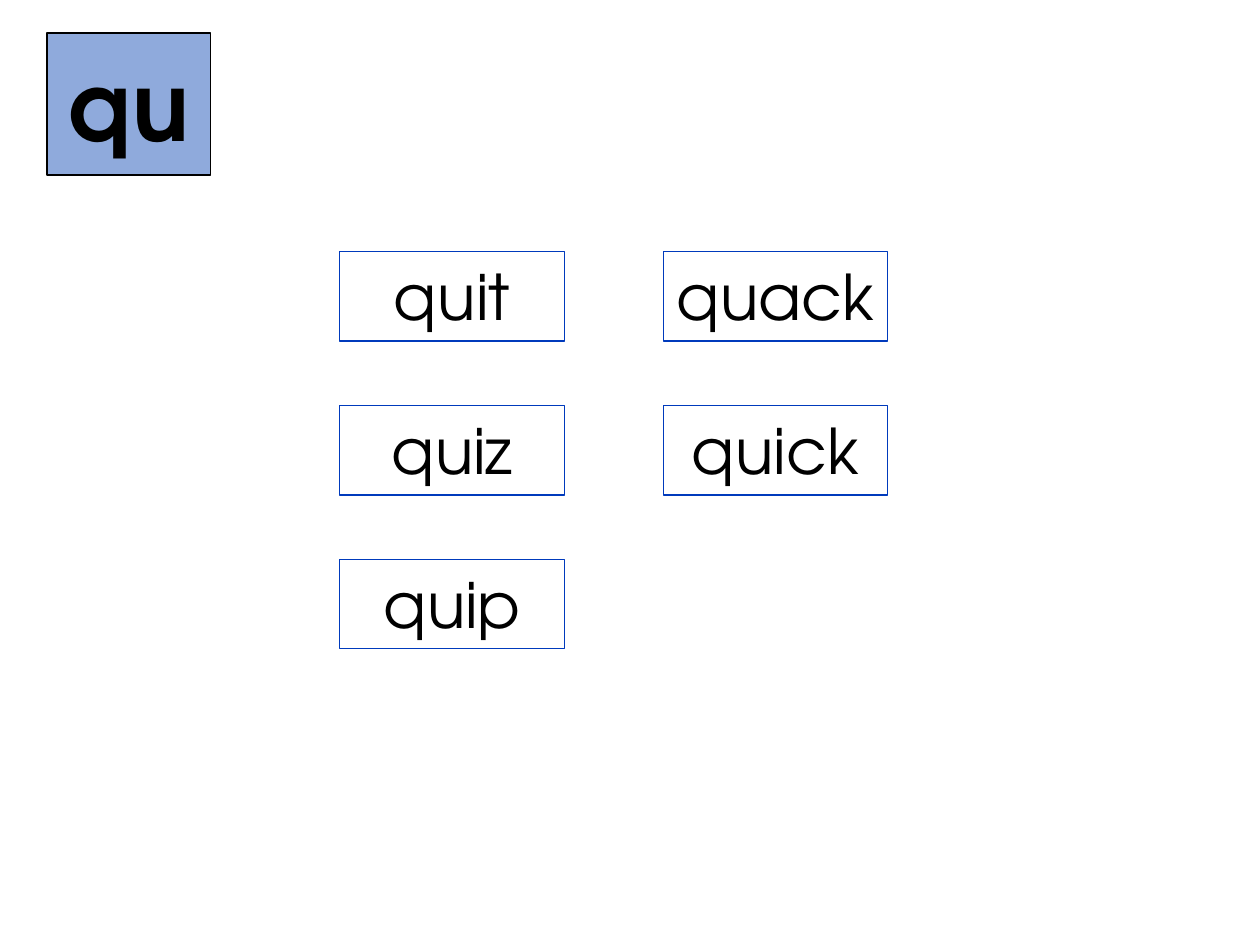
import pptx
import pptx.util
import pptx.dml.color
import pptx.enum.shapes
import pptx.enum.text

Pt = pptx.util.Pt
FONT = "TeX Gyre Adventor"
WORD_COLUMNS = [["quit", "quiz", "quip"], ["quack", "quick"]]


def color(value):
    """Return the RGB color for a hex string."""
    return pptx.dml.color.RGBColor.from_string(value)


def set_outline(shape, line_color, width):
    """Give a shape a solid outline."""
    shape.line.color.rgb = color(line_color)
    shape.line.width = Pt(width)


def write_text(shape, text, size, bold, anchor, auto_size):
    """Write one centered black line of text in a shape."""
    frame = shape.text_frame
    frame.text = text
    frame.word_wrap = True
    frame.auto_size = auto_size
    frame.vertical_anchor = anchor
    paragraph = frame.paragraphs[0]
    paragraph.alignment = pptx.enum.text.PP_ALIGN.CENTER
    paragraph.font.name = FONT
    paragraph.font.size = Pt(size)
    paragraph.font.bold = bold
    paragraph.font.color.rgb = color("000000")


def place_sound_title(slide, text, left, top, width, height):
    """Place the title as a filled sound tile."""
    title = slide.shapes.title
    title.left, title.top = Pt(left), Pt(top)
    title.width, title.height = Pt(width), Pt(height)
    title.fill.solid()
    title.fill.fore_color.rgb = color("8FAADC")
    set_outline(title, "000000", 1)
    write_text(title, text, 54, True, pptx.enum.text.MSO_ANCHOR.MIDDLE,
               pptx.enum.text.MSO_AUTO_SIZE.NONE)


def place_word_card(slide, word, left, top, width, height):
    """Place one outlined word card."""
    card = slide.shapes.add_shape(
        pptx.enum.shapes.MSO_SHAPE.RECTANGLE,
        Pt(left), Pt(top), Pt(width), Pt(height))
    card.shadow.inherit = False
    card.fill.background()
    set_outline(card, "003ABC", 0.75)
    write_text(card, word, 36, False, pptx.enum.text.MSO_ANCHOR.TOP,
               pptx.enum.text.MSO_AUTO_SIZE.SHAPE_TO_FIT_TEXT)


def place_word_grid(slide, columns, left, top, width, height):
    """Fill a box with word cards in evenly spaced columns."""
    card_width, card_height = 128.2, 51.1
    column_step = (width - card_width) / (len(columns) - 1)
    row_step = (height - card_height) / (max(map(len, columns)) - 1)
    for column, words in enumerate(columns):
        for row, word in enumerate(words):
            place_word_card(slide, word, left + column * column_step,
                            top + row * row_step, card_width, card_height)


def main():
    """Build and save the word slide."""
    presentation = pptx.Presentation()
    presentation.slide_width, presentation.slide_height = Pt(720), Pt(540)
    slide = presentation.slides.add_slide(presentation.slide_layouts[5])
    place_sound_title(slide, "qu", 26.8, 18.9, 93.6, 81.2)
    place_word_grid(slide, WORD_COLUMNS, 194.2, 143.8, 313, 226.9)
    presentation.save("out.pptx")


if __name__ == "__main__":
    main()
